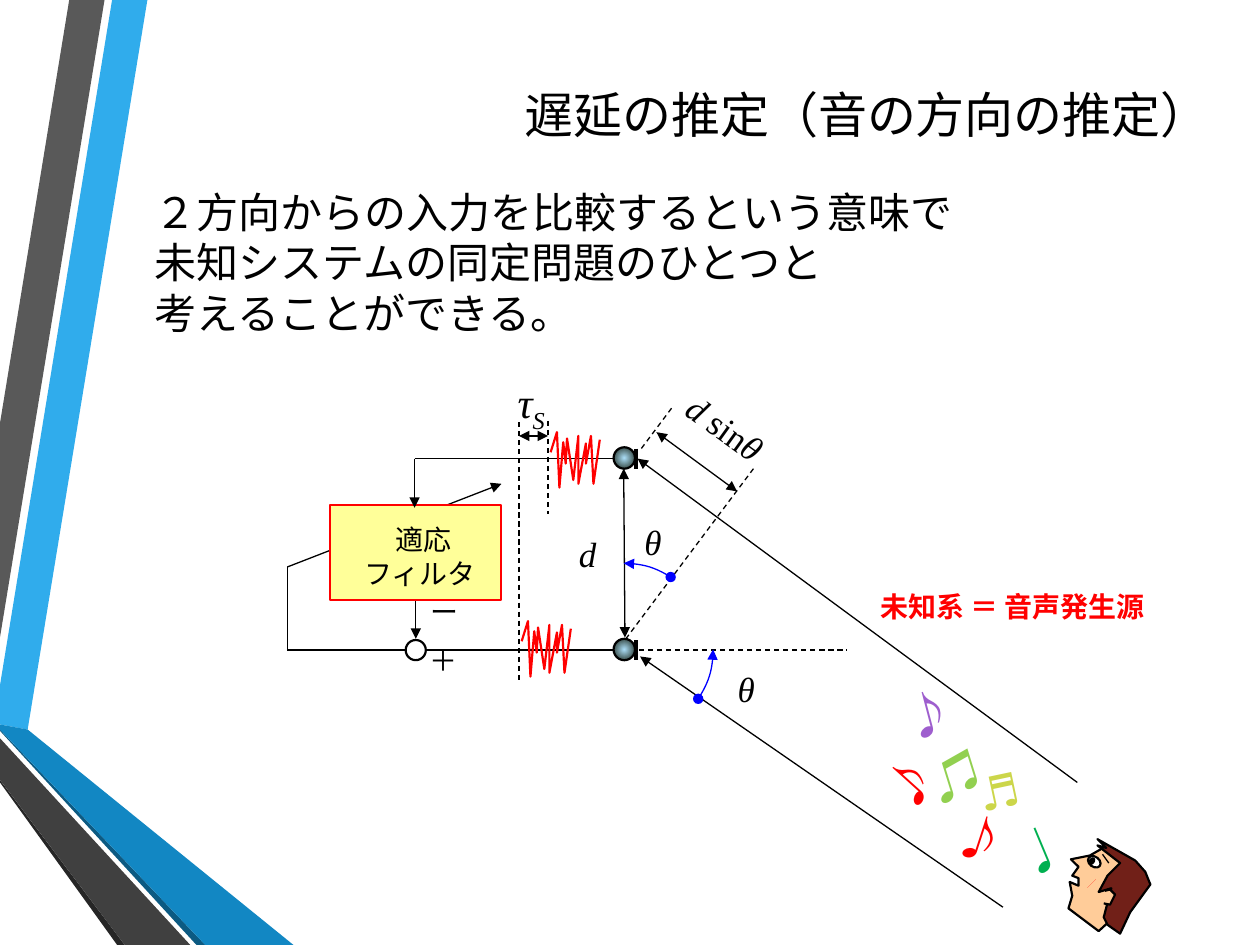
import pptx
import pptx.util
import pptx.dml.color
import pptx.enum.dml
import pptx.enum.shapes
import pptx.enum.text
import pptx.oxml
import pptx.oxml.ns
import lxml.etree

RGBColor = pptx.dml.color.RGBColor
BLACK = RGBColor(0x00, 0x00, 0x00)
WHITE = RGBColor(0xFF, 0xFF, 0xFF)
RED = RGBColor(0xFF, 0x00, 0x00)
BLUE = RGBColor(0x00, 0x00, 0xFF)
FILTER_YELLOW = RGBColor(0xFF, 0xFF, 0x99)
SKIN = RGBColor(0xFF, 0xCC, 0x99)
HAIR = RGBColor(0x71, 0x20, 0x18)
SKY = RGBColor(0x30, 0xAC, 0xEC)
GRAY = RGBColor(0x59, 0x59, 0x59)
NEAR_BLACK = RGBColor(0x26, 0x26, 0x26)
NAVY = RGBColor(0x0C, 0x5A, 0x82)
OCEAN = RGBColor(0x12, 0x87, 0xC3)
DARK_GRAY = RGBColor(0x40, 0x40, 0x40)
LIME = RGBColor(0xCC, 0xD6, 0x4A)
GREEN = RGBColor(0x92, 0xD0, 0x50)
PURPLE = RGBColor(0x9E, 0x5E, 0xCE)
DEEP_GREEN = RGBColor(0x00, 0xB0, 0x50)

SERIF, SANS, CJK = "Times New Roman", "Calibri", "Noto Sans CJK JP"
SHAPE = pptx.enum.shapes.MSO_SHAPE
ALIGN = pptx.enum.text.PP_ALIGN
qn = pptx.oxml.ns.qn

MIC_X, UPPER_Y, LOWER_Y = 4.96, 3.64, 5.16
WAVE = [(0, 0.16), (0.05, 0), (0.07, 0.44), (0.1, 0.08), (0.12, 0.25), (0.13, 0.05),
        (0.18, 0.38), (0.22, 0.03), (0.22, 0.41), (0.28, 0.09), (0.28, 0.25),
        (0.32, 0.03), (0.34, 0.41), (0.39, 0.06)]
GRADIENT = (
    '<a:gradFill xmlns:a="http://schemas.openxmlformats.org/drawingml/2006/main" rotWithShape="1">'
    '<a:gsLst><a:gs pos="0"><a:srgbClr val="ACDEF7"/></a:gs>'
    '<a:gs pos="100000"><a:srgbClr val="101909"/></a:gs></a:gsLst>'
    '<a:path path="circle"><a:fillToRect l="50000" t="50000" r="50000" b="50000"/></a:path>'
    '</a:gradFill>')


def size(inches):
    return pptx.util.Cm(inches * 2.54)


def paint(shape, fill, line, weight=1.25):
    shape.shadow.inherit = False
    if fill is None:
        shape.fill.background()
    else:
        shape.fill.solid()
        shape.fill.fore_color.rgb = fill
    if line is None:
        shape.line.fill.background()
    else:
        shape.line.color.rgb = line
        shape.line.width = pptx.util.Pt(weight)


def add_ends(shape, head, tail):
    outline = shape._element.spPr.find(qn("a:ln"))
    for tag, kind in (("a:headEnd", head), ("a:tailEnd", tail)):
        if kind:
            lxml.etree.SubElement(outline, qn(tag)).set("type", kind)


def add_line(slide, x1, y1, x2, y2, weight=0.75, dash=False, head=None, tail=None):
    line = slide.shapes.add_connector(pptx.enum.shapes.MSO_CONNECTOR.STRAIGHT,
                                      size(x1), size(y1), size(x2), size(y2))
    line.line.color.rgb = BLACK
    line.line.width = pptx.util.Pt(weight)
    if dash:
        line.line.dash_style = pptx.enum.dml.MSO_LINE.DASH
    add_ends(line, head, tail)
    lxml.etree.SubElement(line._element.spPr, qn("a:effectLst"))


def add_outline(slide, points, fill, line=None, close=True):
    corners = [(size(x), size(y)) for x, y in points]
    builder = slide.shapes.build_freeform(*corners[0])
    builder.add_line_segments(corners[1:], close=close)
    paint(builder.convert_to_shape(), fill, line)


def add_preset(slide, kind, at, fill, line, weight=1.25, rotation=0):
    shape = slide.shapes.add_shape(kind, *map(size, at))
    shape.rotation = rotation
    paint(shape, fill, line, weight)
    return shape


def add_arc(slide, at, start, end):
    arc = add_preset(slide, SHAPE.ARC, at, None, BLUE, 0.75)
    arc.adjustments[0], arc.adjustments[1] = start * 0.6, end * 0.6
    add_ends(arc, "triangle", "oval")


def add_run(para, text, points, color=BLACK, latin=SERIF, asian=SANS,
            italic=False, bold=False, subscript=False):
    span = para.add_run()
    span.text = text
    font = span.font
    font.size, font.name = pptx.util.Pt(points), latin
    font.italic, font.bold = italic, bold
    font.color.rgb = color
    properties = span._r.get_or_add_rPr()
    lxml.etree.SubElement(properties, qn("a:ea")).set("typeface", asian)
    if subscript:
        properties.set("baseline", "-25000")


def add_text(slide, at, lines, align=ALIGN.LEFT, rotation=0, grow=True):
    """Each line is a list of (text, points, options) runs."""
    box = slide.shapes.add_textbox(*map(size, at))
    box.rotation = rotation
    frame = box.text_frame
    frame.word_wrap = True
    fit = pptx.enum.text.MSO_AUTO_SIZE
    frame.auto_size = fit.SHAPE_TO_FIT_TEXT if grow else fit.NONE
    for number, runs in enumerate(lines):
        para = frame.add_paragraph() if number else frame.paragraphs[0]
        para.alignment = align
        for text, points, options in runs:
            add_run(para, text, points, **options)


def add_microphone(slide, y):
    ball = add_preset(slide, SHAPE.OVAL, (MIC_X - 0.09, y - 0.09, 0.17, 0.17), WHITE, BLACK)
    solid = ball._element.spPr.find(qn("a:solidFill"))
    ball._element.spPr.replace(solid, pptx.oxml.parse_xml(GRADIENT))
    add_line(slide, 5.05, y - 0.08, 5.05, y + 0.08, weight=2.25)


def add_decoration(slide):
    for color, points in (
        (SKY, [(0, 5.44), (0, 5.75), (0.22, 5.79), (1.17, 0), (0.89, 0)]),
        (GRAY, [(0.83, 0), (0.55, 0), (0, 3.36), (0, 5.06)]),
        (NEAR_BLACK, [(0, 6.19), (0, 6.21), (0.93, 7.5), (0.99, 7.5)]),
        (NAVY, [(0, 5.79), (0, 5.8), (1.56, 7.5), (1.63, 7.5)]),
        (OCEAN, [(0, 5.79), (1.63, 7.5), (2.33, 7.5), (0.22, 5.79), (0, 5.75)]),
        (DARK_GRAY, [(0, 6.19), (0.99, 7.5), (1.51, 7.5), (0, 5.86)]),
    ):
        add_outline(slide, points, color)


def add_speaker(slide):
    tilt = 36.9
    add_outline(slide, [(8.99, 6.9), (8.79, 6.71), (8.72, 6.75), (8.65, 6.79), (8.5, 6.82),
                        (8.56, 6.88), (8.51, 6.95), (8.56, 6.97), (8.56, 7.03), (8.49, 7),
                        (8.51, 7.11), (8.48, 7.21), (8.72, 7.39), (8.97, 7.16)], SKIN, BLACK)
    add_preset(slide, SHAPE.OVAL, (8.63, 6.8, 0.11, 0.08), WHITE, BLACK, rotation=tilt)
    add_preset(slide, SHAPE.OVAL, (8.65, 6.81, 0.03, 0.05), BLACK, BLACK, rotation=tilt)
    add_outline(slide, [(9.01, 6.83), (8.71, 6.66), (8.78, 6.73), (8.71, 6.71), (8.89, 6.85),
                        (8.79, 6.95), (8.72, 7.08), (8.82, 7.05), (8.76, 7.28), (8.79, 7.34),
                        (8.89, 7.41), (8.97, 7.24), (9.13, 7.02), (9.09, 6.92)], HAIR, BLACK)
    add_outline(slide, [(8.77, 7.07), (8.81, 7.06), (8.85, 7.1), (8.81, 7.18), (8.76, 7.17)],
                SKIN, BLACK, close=False)
    add_line(slide, 8.75, 6.78, 8.8, 6.85)
    cheek = add_preset(slide, SHAPE.OVAL, (8.63, 6.97, 0.08, 0.1), SKIN, None, rotation=tilt)
    cheek.fill.patterned()
    cheek.fill.pattern = pptx.enum.dml.MSO_PATTERN.PERCENT_10
    cheek.fill.fore_color.rgb, cheek.fill.back_color.rgb = RED, SKIN


def add_diagram(slide):
    both = {"head": "triangle", "tail": "triangle"}
    # Wave fronts and signal paths
    add_line(slide, 5.33, 3.24, 5.09, 3.56, dash=True)
    add_line(slide, 5.98, 3.72, 4.96, 5.08, dash=True)
    add_line(slide, 3.29, UPPER_Y, 4.87, UPPER_Y)
    add_line(slide, 2.28, LOWER_Y, 4.87, LOWER_Y)
    add_line(slide, 2.28, 4.5, 3.98, 3.84, tail="triangle")
    add_line(slide, 3.3, 4.76, 3.3, 5.07, tail="triangle")
    add_line(slide, 2.28, 4.5, 2.28, LOWER_Y)
    # Adaptive filter and adder
    add_preset(slide, SHAPE.RECTANGLE, (2.62, 4.01, 1.36, 0.75), FILTER_YELLOW, RED)
    add_text(slide, (2.77, 4.1, 1.13, 0.64), [[(" 適応", 16, {})], [("フィルタ", 16, {})]],
             ALIGN.CENTER)
    add_line(slide, 3.29, UPPER_Y, 3.29, 4.03, tail="triangle")
    add_preset(slide, SHAPE.OVAL, (3.22, 5.08, 0.16, 0.16), WHITE, BLACK)
    for sign, left, top in (("ー", 3.32, 4.67), ("＋", 3.31, 5.06)):
        add_text(slide, (left, top, 0.61, 0.37), [[(sign, 16, {})]])
    # Microphones, their spacing and the arriving sound
    for y in (UPPER_Y, LOWER_Y):
        add_microphone(slide, y)
    add_line(slide, 4.95, 3.72, 4.96, 5.06, **both)
    add_line(slide, 8.55, 6.21, 5.06, 3.64, tail="triangle")
    add_line(slide, 7.96, 7.2, 5.08, 5.21, tail="triangle")
    add_line(slide, 5.07, LOWER_Y, 6.72, LOWER_Y, dash=True)
    for left, top in ((4.37, 3.43), (4.14, 4.93)):
        add_outline(slide, [(left + x, top + y) for x, y in WAVE], None, RED, close=False)
    # Delay, angles and path difference
    add_line(slide, 4.12, 3.35, 4.12, 5.4, dash=True)
    add_line(slide, 4.35, 3.34, 4.35, 4.08, dash=True)
    add_line(slide, 4.12, 3.46, 4.35, 3.46, **both)
    add_line(slide, 5.21, 3.43, 5.85, 3.9, **both)
    add_arc(slide, (4.26, 4.47, 1.38, 1.38), 270, 302.74)
    add_arc(slide, (4.28, 4.47, 1.38, 1.38), 359.49, 34.05)
    slanted = {"italic": True}
    add_text(slide, (3.41, 2.94, 1.53, 0.5),
             [[(" ", 24, {}), ("τ", 24, slanted), ("S", 24, {"italic": True, "subscript": True})]],
             ALIGN.CENTER)
    for symbol, left, top, align in (("d", 4.33, 4.18, ALIGN.CENTER), ("θ", 5.7, 5.25, ALIGN.LEFT),
                                     ("θ", 4.85, 4.08, ALIGN.CENTER)):
        add_text(slide, (left, top, 0.61, 0.44), [[(" ", 16, {}), (symbol, 20, slanted)]], align)
    add_text(slide, (5.14, 3.18, 1.23, 0.44),
             [[("d ", 20, slanted), ("sin", 20, {}), ("θ", 20, slanted)]], ALIGN.CENTER, 35.8)
    add_text(slide, (6.89, 4.63, 2.58, 0.37),
             [[("未知系 ＝ 音声発生源", 16, {"color": RED, "bold": True})]])


def add_notes_of_music(slide):
    for symbol, at, rotation, color, points, latin, align in (
        ("♬", (7.63, 6.03, 0.33, 0.18), 348, LIME, 26, SANS, ALIGN.CENTER),
        ("♫", (7.31, 5.92, 0.23, 0.48), 342.8, GREEN, 28, CJK, ALIGN.JUSTIFY),
        ("♪", (7.53, 6.31, 0.21, 0.39), 18.3, RED, 28, CJK, ALIGN.JUSTIFY),
        ("♪", (7.06, 5.43, 0.21, 0.39), 345.3, PURPLE, 28, CJK, ALIGN.JUSTIFY),
        ("♩", (7.99, 6.53, 0.18, 0.48), 337.3, DEEP_GREEN, 28, CJK, ALIGN.JUSTIFY),
        ("♪", (6.88, 5.9, 0.69, 0.49), 312, RED, 28, CJK, ALIGN.JUSTIFY),
    ):
        look = {"color": color, "latin": latin, "asian": CJK, "bold": True}
        add_text(slide, at, [[(symbol, points, look)]], align, rotation, grow=False)


def add_title(slide, text):
    title = slide.shapes.title
    title.left, title.top, title.width, title.height = map(size, (1.27, 0.18, 8.43, 1.45))
    title.text_frame.vertical_anchor = pptx.enum.text.MSO_ANCHOR.MIDDLE
    para = title.text_frame.paragraphs[0]
    para.alignment = ALIGN.RIGHT
    add_run(para, text, 28, latin=SANS)


def main():
    deck = pptx.Presentation()
    deck.slide_width, deck.slide_height = size(10), size(7.5)
    page = deck.slides.add_slide(deck.slide_layouts[5])
    add_decoration(page)
    add_title(page, "遅延の推定（音の方向の推定）")
    add_text(page, (1.13, 1.43, 8.41, 1.31),
             [[(line, 24, {})] for line in ("２方向からの入力を比較するという意味で",
                                            "未知システムの同定問題のひとつと", "考えることができる。")])
    add_speaker(page)
    add_diagram(page)
    add_notes_of_music(page)
    deck.save("out.pptx")


if __name__ == "__main__":
    main()
